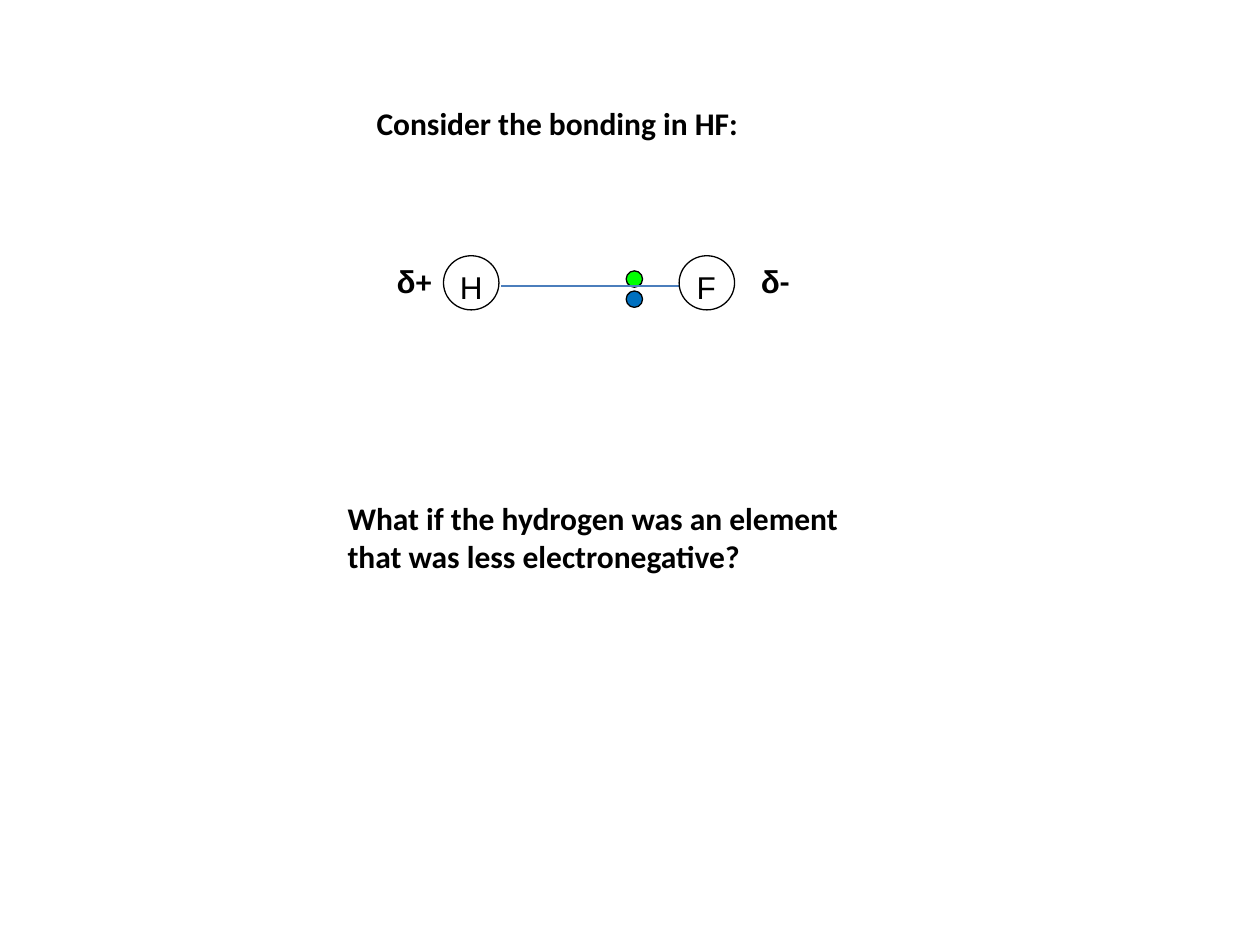
from lxml import etree
from pptx import Presentation
from pptx import util as u
from pptx.dml.color import RGBColor
from pptx.enum import shapes, text
from pptx.oxml.ns import qn


def add_text(parent, runs, left, top, width, height, bold=True, inset=(0.1, 0.05)):
    """Add a text box; runs is a list of (words, font name) pairs."""
    box = parent.shapes.add_textbox(*map(u.Inches, (left, top, width, height)))
    frame = box.text_frame
    frame.word_wrap = True
    frame.vertical_anchor = text.MSO_ANCHOR.TOP
    frame.margin_left = frame.margin_right = u.Inches(inset[0])
    frame.margin_top = frame.margin_bottom = u.Inches(inset[1])
    for words, font_name in runs:
        run = frame.paragraphs[0].add_run()
        run.text = words
        run.font.name = font_name
        run.font.size = u.Pt(18)
        run.font.bold = bold
        run.font.color.rgb = RGBColor.from_string("000000")


def add_circle(parent, left, top, width, height, fill=None):
    circle = parent.shapes.add_shape(
        shapes.MSO_SHAPE.OVAL, *map(u.Inches, (left, top, width, height)))
    circle.shadow.inherit = False
    if fill:
        circle.fill.solid()
        circle.fill.fore_color.rgb = RGBColor.from_string(fill)
    else:
        circle.fill.background()
    circle.line.color.rgb = RGBColor.from_string("000000")
    circle.line.width = u.Pt(0.75)


presentation = Presentation()
presentation.slide_width = u.Inches(10)
presentation.slide_height = u.Inches(7.5)
slide = presentation.slides.add_slide(presentation.slide_layouts[6])

add_text(slide, [("Consider the bonding in HF:", "Calibri")], 2.89, 0.78, 3.83, 0.4)

# Shared electron pair, drawn closer to fluorine
electron_pair = slide.shapes.add_group_shape()
for top, fill in ((2.15, "00FF00"), (2.31, "0070C0")):
    add_circle(electron_pair, 4.97, top, 0.13, 0.13, fill)

bond = slide.shapes.add_connector(
    shapes.MSO_CONNECTOR.STRAIGHT,
    u.Inches(3.98), u.Inches(2.27), u.Inches(5.39), u.Inches(2.27))
bond.line.color.rgb = RGBColor.from_string("4B7EBC")
bond.line.width = u.Pt(0.75)
etree.SubElement(bond.element.spPr, qn("a:effectLst"))

# Atoms with their partial charges
for symbol, symbol_left, atom_left, sign, charge_left in (
        ("H", 3.57, 3.52, "+", 3.05), ("F", 5.45, 5.39, "-", 5.94)):
    atom = slide.shapes.add_group_shape()
    add_text(atom, [(symbol, "Arial")], symbol_left, 2.09, 0.4, 0.19,
             bold=False, inset=(0.08, 0.04))
    add_circle(atom, atom_left, 2.03, 0.44, 0.43)
    add_text(slide, [("δ", "Arial"), (sign, "Calibri")], charge_left, 2.03, 0.55, 0.4)

add_text(slide,
         [("What if the hydrogen was an element that was less electronegative?", "Calibri")],
         2.66, 3.91, 4.22, 0.71)

presentation.save("out.pptx")
